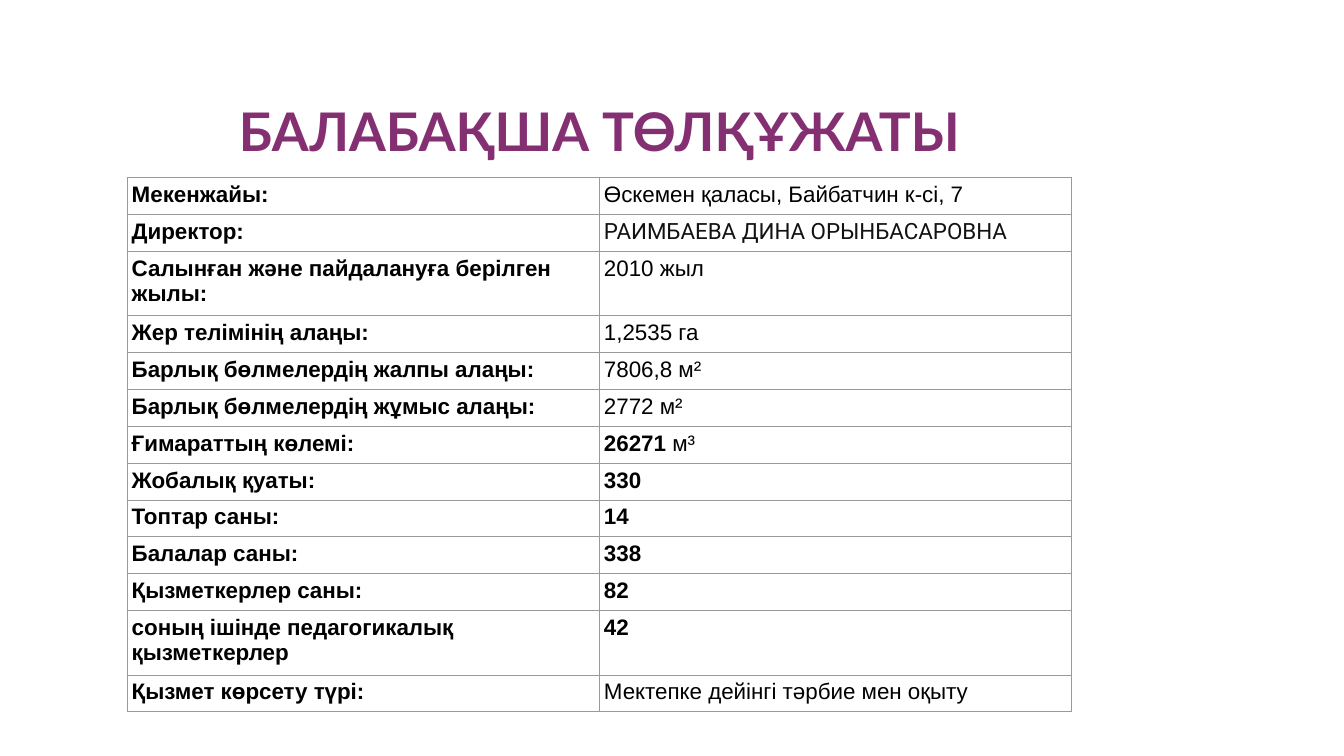
from lxml import etree
from pptx import Presentation
from pptx.dml.color import RGBColor
from pptx.enum.text import MSO_ANCHOR, PP_ALIGN
from pptx.oxml import parse_xml
from pptx.oxml.ns import nsdecls
from pptx.util import Cm, Pt

BOTTOM, TOP = MSO_ANCHOR.BOTTOM, MSO_ANCHOR.TOP
CENTER, LEFT = PP_ALIGN.CENTER, PP_ALIGN.LEFT

COLORS = {
    "title": "852F73",
    "title_edge": "5E1A50",
    "text": "000000",
    "director": "121212",
    "border": "999999",
    "cell": "FFFFFF",
}
SINGLE_ROW, DOUBLE_ROW = 0.93, 1.62
DIRECTOR = "Директор:"
PASSPORT = [
    ("Мекенжайы:", [("Өскемен қаласы, Байбатчин к-сі, 7", False)], SINGLE_ROW),
    (DIRECTOR, [("РАИМБАЕВА ДИНА ОРЫНБАСАРОВНА", False)], SINGLE_ROW),
    ("Салынған және пайдалануға берілген жылы:", [("2010 жыл", False)], DOUBLE_ROW),
    ("Жер телімінің алаңы:", [("1,2535 га", False)], SINGLE_ROW),
    ("Барлық бөлмелердің жалпы алаңы:", [("7806,8 м²", False)], SINGLE_ROW),
    ("Барлық бөлмелердің жұмыс алаңы:", [("2772 м²", False)], SINGLE_ROW),
    ("Ғимараттың көлемі:", [("26271", True), (" м³", False)], SINGLE_ROW),
    ("Жобалық қуаты:", [("330", True)], SINGLE_ROW),
    ("Топтар саны:", [("14", True)], SINGLE_ROW),
    ("Балалар саны:", [("338", True)], SINGLE_ROW),
    ("Қызметкерлер саны:", [("82", True)], SINGLE_ROW),
    ("соның ішінде педагогикалық қызметкерлер", [("42", True)], DOUBLE_ROW),
    ("Қызмет көрсету түрі:", [("Мектепке дейінгі тәрбие мен оқыту", False)], SINGLE_ROW),
]


class PassportSlide:
    """Holds the style and the current slide, and adds its elements."""

    def __init__(self, presentation):
        self.slide = presentation.slides.add_slide(presentation.slide_layouts[5])
        self.inset = Cm(0.12)

    def format_run(self, run, size, font, color, bold):
        run.font.size = Pt(size)
        run.font.name = font
        run.font.bold = bold
        run.font.color.rgb = RGBColor.from_string(COLORS[color])

    def line(self, tag, width, color):
        return parse_xml(
            f'<a:{tag} {nsdecls("a")} w="{width}"><a:solidFill>'
            f'<a:srgbClr val="{COLORS[color]}"/></a:solidFill></a:{tag}>'
        )

    def title(self, wording, left, top, width, height):
        heading = self.slide.shapes.title
        heading.left, heading.top = Cm(left), Cm(top)
        heading.width, heading.height = Cm(width), Cm(height)
        frame = heading.text_frame
        frame.text = wording
        frame.vertical_anchor = BOTTOM
        frame.margin_left = frame.margin_right = self.inset
        frame.margin_top = frame.margin_bottom = 0
        frame.paragraphs[0].alignment = CENTER
        run = frame.paragraphs[0].runs[0]
        self.format_run(run, 38, "Lato", "title", True)
        run._r.get_or_add_rPr().insert(0, self.line("ln", 500, "title_edge"))

    def cell(self, cell, parts, font="Arial", color="text"):
        cell.margin_left = cell.margin_right = self.inset
        cell.margin_top = cell.margin_bottom = self.inset
        cell.vertical_anchor = TOP
        paragraph = cell.text_frame.paragraphs[0]
        paragraph.alignment = LEFT
        for wording, bold in parts:
            run = paragraph.add_run()
            run.text = wording
            self.format_run(run, 16, font, color, bold)
        properties = cell._tc.get_or_add_tcPr()
        for side in ("lnL", "lnR", "lnT", "lnB"):
            properties.append(self.line(side, Pt(0.75), "border"))
        fill = etree.SubElement(properties, "{%s}solidFill" % properties.nsmap["a"])
        etree.SubElement(fill, "{%s}srgbClr" % properties.nsmap["a"], val=COLORS["cell"])

    def table(self, entries, left, top, column_width):
        height = sum(row_height for _, _, row_height in entries)
        table = self.slide.shapes.add_table(
            len(entries), 2, Cm(left), Cm(top), Cm(2 * column_width), Cm(height)
        ).table
        table.first_row = table.horz_banding = False
        for column in table.columns:
            column.width = Cm(column_width)
        for index, (label, value, row_height) in enumerate(entries):
            table.rows[index].height = Cm(row_height)
            self.cell(table.cell(index, 0), [(label, True)])
            style = ("Roboto", "director") if label == DIRECTOR else ("Arial", "text")
            self.cell(table.cell(index, 1), value, *style)


def main():
    presentation = Presentation()
    presentation.slide_width, presentation.slide_height = Cm(33.87), Cm(19.05)
    passport = PassportSlide(presentation)
    passport.title("БАЛАБАҚША ТӨЛҚҰЖАТЫ", 1.7, 0.9, 26.82, 3.18)
    passport.table(PASSPORT, 3.2, 4.47, 11.9)
    presentation.save("out.pptx")


if __name__ == "__main__":
    main()
